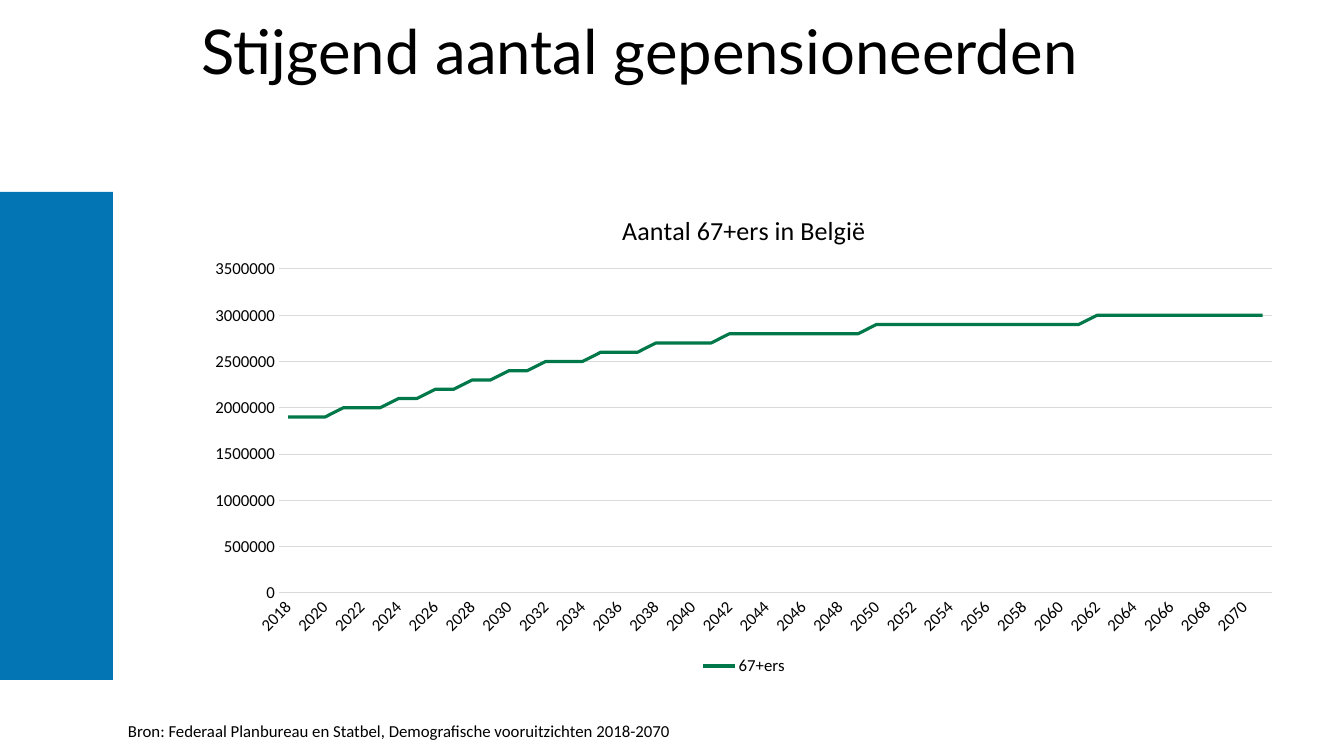
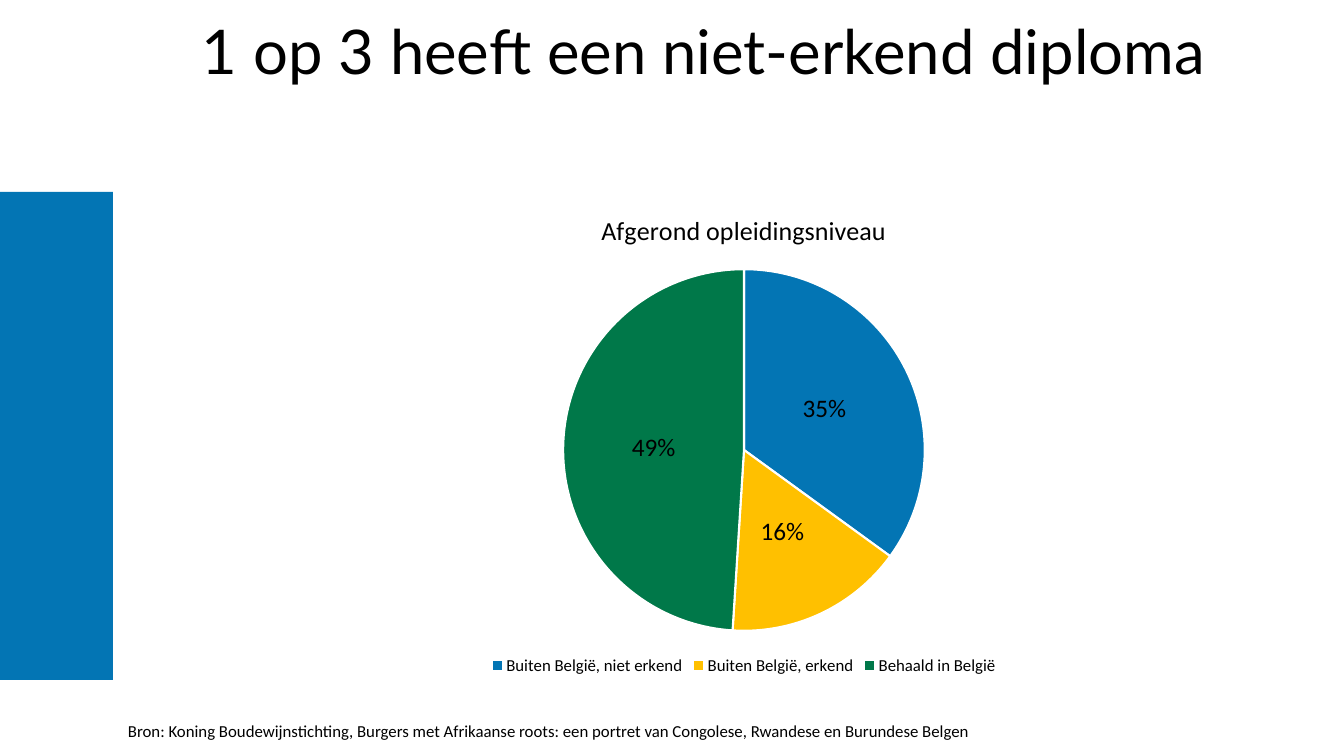
import lxml.etree
import pptx
import pptx.chart.data
import pptx.dml.color
import pptx.enum.chart
import pptx.enum.shapes
import pptx.enum.text
import pptx.oxml.ns
import pptx.util

EMU_PER_INCH = 914400
PX_PER_INCH = 100.8
SLIDE_SIZE = (1344, 756)
BAND_BOX = (0, 192, 113, 488)
TITLE_BOX = (192, 0, 1102, 109)
CHART_BOX = (194, 192, 1100, 488)
LINE_PLOT_BOX = (279, 269, 993, 324)
SOURCE_BOX = (118, 716, 1176, 30)

TITLE_FONT = "Lato"
BODY_FONT = "Calibri"
COLORS = {
    "text": "000000",
    "blue": "0375B4",
    "yellow": "FFC000",
    "green": "007849",
    "grid": "D9D9D9",
    "white": "FFFFFF",
}

FIRST_YEAR = 2018
YEARS_PER_SENIOR_COUNT = {
    1900000: 3, 2000000: 3, 2100000: 2, 2200000: 2, 2300000: 2, 2400000: 2,
    2500000: 3, 2600000: 3, 2700000: 4, 2800000: 8, 2900000: 12, 3000000: 10,
}
DIPLOMAS = [
    ("Buiten België, niet erkend", 35, "blue"),
    ("Buiten België, erkend", 16, "yellow"),
    ("Behaald in België", 49, "green"),
]


def px(length):
    return pptx.util.Emu(round(length * EMU_PER_INCH / PX_PER_INCH))


def place(box):
    return [px(length) for length in box]


def color(name):
    return pptx.dml.color.RGBColor.from_string(COLORS[name])


def style_font(font, size, name=BODY_FONT):
    font.size = pptx.util.Pt(size)
    font.name = name
    font.bold = False
    font.color.rgb = color("text")


def style_line(line, name, width):
    line.color.rgb = color(name)
    line.width = pptx.util.Pt(width)


def add_text(slide, box, text, size, font_name):
    frame = slide.shapes.add_textbox(*place(box)).text_frame
    frame.word_wrap = True
    frame.text = text
    style_font(frame.paragraphs[0].runs[0].font, size, font_name)
    return frame


def add_band(slide):
    band = slide.shapes.add_shape(
        pptx.enum.shapes.MSO_SHAPE.RECTANGLE, *place(BAND_BOX))
    band.shadow.inherit = False
    band.fill.solid()
    band.fill.fore_color.rgb = color("blue")
    band.line.fill.background()


def add_content_slide(deck, title, source):
    slide = deck.slides.add_slide(deck.slide_layouts[6])
    add_band(slide)
    heading = add_text(slide, TITLE_BOX, title, 44, TITLE_FONT)
    heading.vertical_anchor = pptx.enum.text.MSO_ANCHOR.MIDDLE
    heading.paragraphs[0].line_spacing = 0.9
    footer = add_text(slide, SOURCE_BOX, source, 12, BODY_FONT)
    footer.auto_size = pptx.enum.text.MSO_AUTO_SIZE.SHAPE_TO_FIT_TEXT
    return slide


def add_chart(slide, kind, title, series_name, categories, values):
    data = pptx.chart.data.CategoryChartData()
    data.categories = categories
    data.add_series(series_name, values)
    chart = slide.shapes.add_chart(kind, *place(CHART_BOX), data).chart
    style_font(chart.font, 10)
    chart.has_title = True
    chart.chart_title.include_in_layout = False
    heading = chart.chart_title.text_frame
    heading.text = title
    style_font(heading.paragraphs[0].runs[0].font, 18.6)
    chart.has_legend = True
    chart.legend.position = pptx.enum.chart.XL_LEGEND_POSITION.BOTTOM
    chart.legend.include_in_layout = False
    style_font(chart.legend.font, 12)
    return chart


def place_plot(chart, box):
    qn = pptx.oxml.ns.qn
    plot_area = chart._chartSpace.chart.plotArea
    for automatic in plot_area.findall(qn("c:layout")):
        plot_area.remove(automatic)
    layout = lxml.etree.Element(qn("c:layout"))
    plot_area.insert(0, layout)
    manual = lxml.etree.SubElement(layout, qn("c:manualLayout"))
    left, top, width, height = box
    chart_left, chart_top, chart_width, chart_height = CHART_BOX
    settings = {
        "layoutTarget": "inner",
        "xMode": "edge",
        "yMode": "edge",
        "x": (left - chart_left) / chart_width,
        "y": (top - chart_top) / chart_height,
        "w": width / chart_width,
        "h": height / chart_height,
    }
    for tag, value in settings.items():
        lxml.etree.SubElement(manual, qn("c:" + tag)).set("val", str(value))


def style_axes(chart):
    for axis in (chart.category_axis, chart.value_axis):
        axis.major_tick_mark = pptx.enum.chart.XL_TICK_MARK.NONE
        axis.minor_tick_mark = pptx.enum.chart.XL_TICK_MARK.NONE
        style_font(axis.tick_labels.font, 12)
    years, counts = chart.category_axis, chart.value_axis
    style_line(years.format.line, "grid", 0.75)
    years_text = years._element.find(pptx.oxml.ns.qn("c:txPr"))
    years_text.find(pptx.oxml.ns.qn("a:bodyPr")).set("rot", "-2700000")
    counts.format.line.fill.background()
    counts.minimum_scale = 0
    counts.maximum_scale = 3500000
    counts.major_unit = 500000
    style_line(counts.major_gridlines.format.line, "grid", 0.75)


def add_seniors_chart(slide):
    seniors = [count for count, years in YEARS_PER_SENIOR_COUNT.items()
               for _ in range(years)]
    years = [str(FIRST_YEAR + offset) for offset in range(len(seniors))]
    chart = add_chart(slide, pptx.enum.chart.XL_CHART_TYPE.LINE,
                      "Aantal 67+ers in België", "67+ers", years, seniors)
    place_plot(chart, LINE_PLOT_BOX)
    style_axes(chart)
    trend = chart.plots[0].series[0]
    trend.smooth = False
    trend.marker.style = pptx.enum.chart.XL_MARKER_STYLE.NONE
    style_line(trend.format.line, "green", 2.25)
    chart.plots[0].vary_by_categories = False


def add_diploma_chart(slide):
    names, shares, fills = zip(*DIPLOMAS)
    title = "Afgerond opleidingsniveau"
    chart = add_chart(slide, pptx.enum.chart.XL_CHART_TYPE.PIE,
                      title, title, names, shares)
    pie = chart.plots[0]
    pie.vary_by_categories = True
    for index, fill in enumerate(fills):
        slice_format = pie.series[0].points[index].format
        slice_format.fill.solid()
        slice_format.fill.fore_color.rgb = color(fill)
        style_line(slice_format.line, "white", 1.5)
    labels = pie.series[0].data_labels
    labels.show_value = False
    labels.show_percentage = True
    labels.number_format = "0%"
    labels.number_format_is_linked = False
    labels.position = pptx.enum.chart.XL_LABEL_POSITION.CENTER
    style_font(labels.font, 18)


def main():
    deck = pptx.Presentation()
    deck.slide_width, deck.slide_height = place(SLIDE_SIZE)
    add_seniors_chart(add_content_slide(
        deck, "Stijgend aantal gepensioneerden",
        "Bron: Federaal Planbureau en Statbel, Demografische vooruitzichten "
        "2018-2070"))
    add_diploma_chart(add_content_slide(
        deck, "1 op 3 heeft een niet-erkend diploma",
        "Bron: Koning Boudewijnstichting, Burgers met Afrikaanse roots: een "
        "portret van Congolese, Rwandese en Burundese Belgen"))
    deck.save("out.pptx")


if __name__ == "__main__":
    main()
